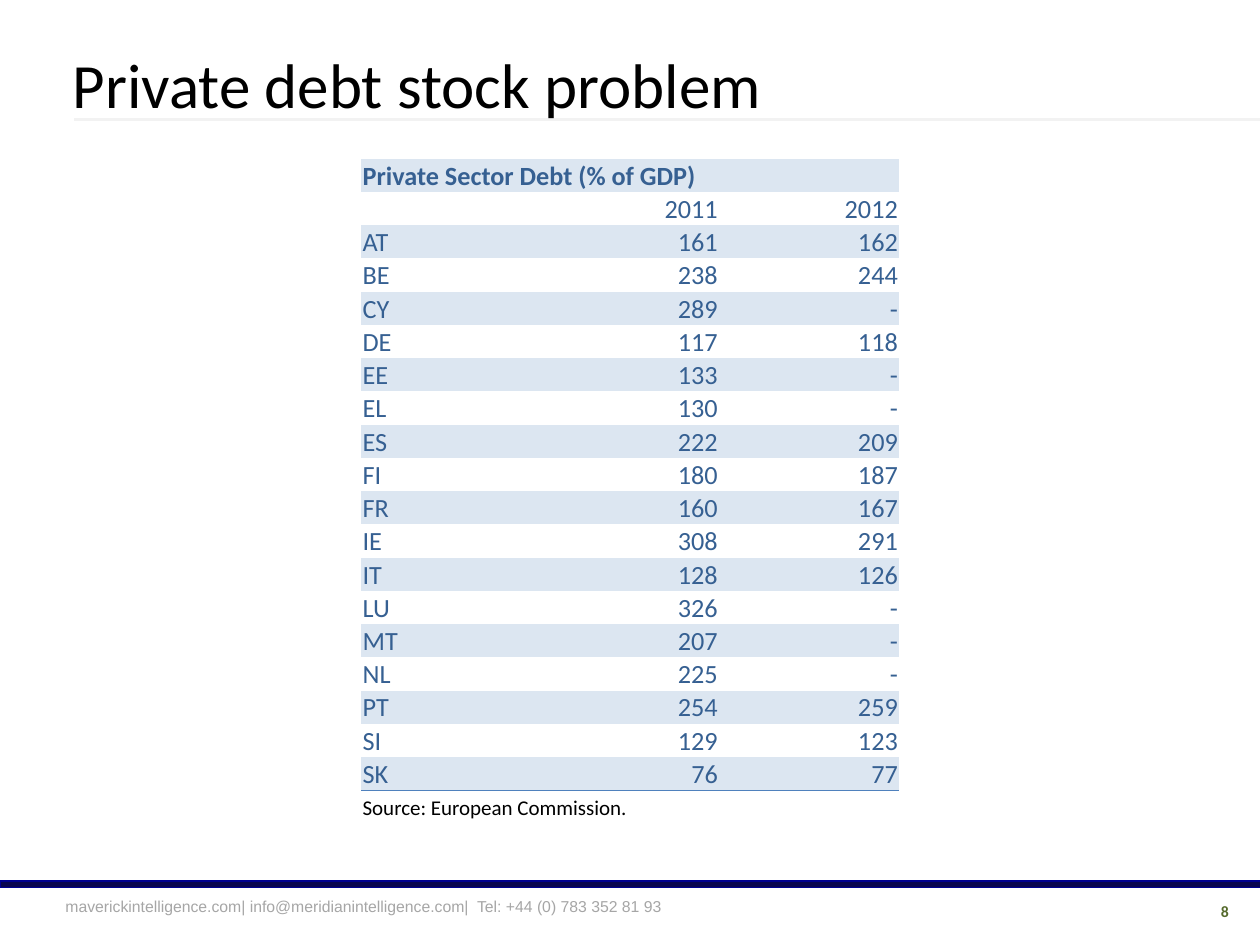
from lxml.etree import SubElement
from pptx import Presentation
from pptx.dml.color import RGBColor
from pptx.enum.shapes import MSO_CONNECTOR as Connector, MSO_SHAPE as Shape
from pptx.enum.text import MSO_ANCHOR as Anchor, PP_ALIGN as Align
from pptx.oxml.ns import qn
from pptx.util import Cm, Pt

TEXT_BLUE = "366092"
BAND_BLUE = "DCE6F1"
NO_GRID_STYLE = "{2D5ABB26-0587-4C30-8999-92F81FD0307C}"
YEARS = ("2011", "2012")
DEBT = [
    ("AT", "161", "162"),
    ("BE", "238", "244"),
    ("CY", "289", "-"),
    ("DE", "117", "118"),
    ("EE", "133", "-"),
    ("EL", "130", "-"),
    ("ES", "222", "209"),
    ("FI", "180", "187"),
    ("FR", "160", "167"),
    ("IE", "308", "291"),
    ("IT", "128", "126"),
    ("LU", "326", "-"),
    ("MT", "207", "-"),
    ("NL", "225", "-"),
    ("PT", "254", "259"),
    ("SI", "129", "123"),
    ("SK", "76", "77"),
]
COLUMN_WIDTHS = (2.72, 4.5, 3.63)
ROW_HEIGHT = 0.67


def color(value):
    return RGBColor.from_string(value)


def write(frame, text, size, ink, font="Calibri", bold=False, align=Align.LEFT):
    frame.text = text
    para = frame.paragraphs[0]
    para.alignment = align
    for span in para.runs:
        span.font.name = font
        span.font.size = Pt(size)
        span.font.bold = bold
        span.font.color.rgb = color(ink)
    return para


def add_text(slide, place, text, size, ink, wrap=True, **style):
    box = slide.shapes.add_textbox(*map(Cm, place))
    frame = box.text_frame
    frame.word_wrap = wrap
    frame.vertical_anchor = Anchor.MIDDLE
    return write(frame, text, size, ink, **style)


def add_rule(slide, start, end, ink, width):
    rule = slide.shapes.add_connector(Connector.STRAIGHT, *map(Cm, start + end))
    rule.line.color.rgb = color(ink)
    rule.line.width = Pt(width)
    SubElement(rule._element.spPr, qn("a:effectLst"))


def add_bar(slide, place, fill, outline):
    bar = slide.shapes.add_shape(Shape.RECTANGLE, *map(Cm, place))
    bar.shadow.inherit = False
    bar.fill.solid()
    bar.fill.fore_color.rgb = color(fill)
    bar.line.color.rgb = color(outline)
    bar.line.width = Pt(0.75)


def add_bottom_border(cell, ink, width):
    border = SubElement(cell._tc.get_or_add_tcPr(), qn("a:lnB"), w=str(Pt(width)))
    fill = SubElement(border, qn("a:solidFill"))
    SubElement(fill, qn("a:srgbClr"), val=ink)


def fill_cell(cell, text, banded, bold, align, last):
    cell.margin_left = cell.margin_right = cell.margin_top = Cm(0.03)
    cell.margin_bottom = 0
    cell.vertical_anchor = Anchor.BOTTOM
    para = write(cell.text_frame, text, 15, TEXT_BLUE, bold=bold, align=align)
    if not text:
        SubElement(para._p, qn("a:endParaRPr"), sz="1500")
    if last:
        add_bottom_border(cell, "4F81BD", 0.5)
    if banded:
        cell.fill.solid()
        cell.fill.fore_color.rgb = color(BAND_BLUE)
    else:
        cell.fill.background()


def add_debt_table(slide, left, top):
    rows = [("Private Sector Debt (% of GDP)", "", ""), ("", *YEARS), *DEBT]
    size = (sum(COLUMN_WIDTHS), ROW_HEIGHT * len(rows))
    holder = slide.shapes.add_table(
        len(rows), len(COLUMN_WIDTHS), *map(Cm, (left, top, *size)))
    table = holder.table
    table.first_row = table.horz_banding = False
    table._tbl.tblPr.find(qn("a:tableStyleId")).text = NO_GRID_STYLE
    for column, width in zip(table.columns, COLUMN_WIDTHS):
        column.width = Cm(width)
    for row_index, values in enumerate(rows):
        table.rows[row_index].height = Cm(ROW_HEIGHT)
        for column_index, text in enumerate(values):
            fill_cell(
                table.cell(row_index, column_index), text,
                banded=row_index % 2 == 0,
                bold=row_index == 0,
                align=Align.RIGHT if column_index else Align.LEFT,
                last=row_index == len(rows) - 1)
    table.cell(0, 0).merge(table.cell(0, 1))


def main():
    deck = Presentation()
    deck.slide_width, deck.slide_height = Cm(25.4), Cm(19.05)
    slide = deck.slides.add_slide(deck.slide_layouts[6])

    add_rule(slide, (25.4, 2.41), (1.5, 2.41), "F2F2F2", 2)
    add_bar(slide, (0, 17.76, 25.42, 0.13), "09054F", "000090")
    add_text(slide, (19.84, 18.03, 5.18, 0.66), "8", 9, "556A2C",
             bold=True, align=Align.RIGHT)
    add_text(slide, (1.22, 0.76, 22.91, 1.85), "Private debt stock problem",
             36, "000000")
    footer = add_text(
        slide, (1.07, 18.01, 18.85, 0.66),
        "maverickintelligence.com| info@meridianintelligence.com|  Tel: +44 (0) 783 352 81 93",
        9, "A6A6A6", font="Arial")
    footer.line_spacing = 0.5
    add_debt_table(slide, 7.28, 3.2)
    add_text(slide, (7.06, 15.9, 5.92, 0.76), "Source: European Commission.",
             12, "000000", wrap=False)
    deck.save("out.pptx")


if __name__ == "__main__":
    main()
